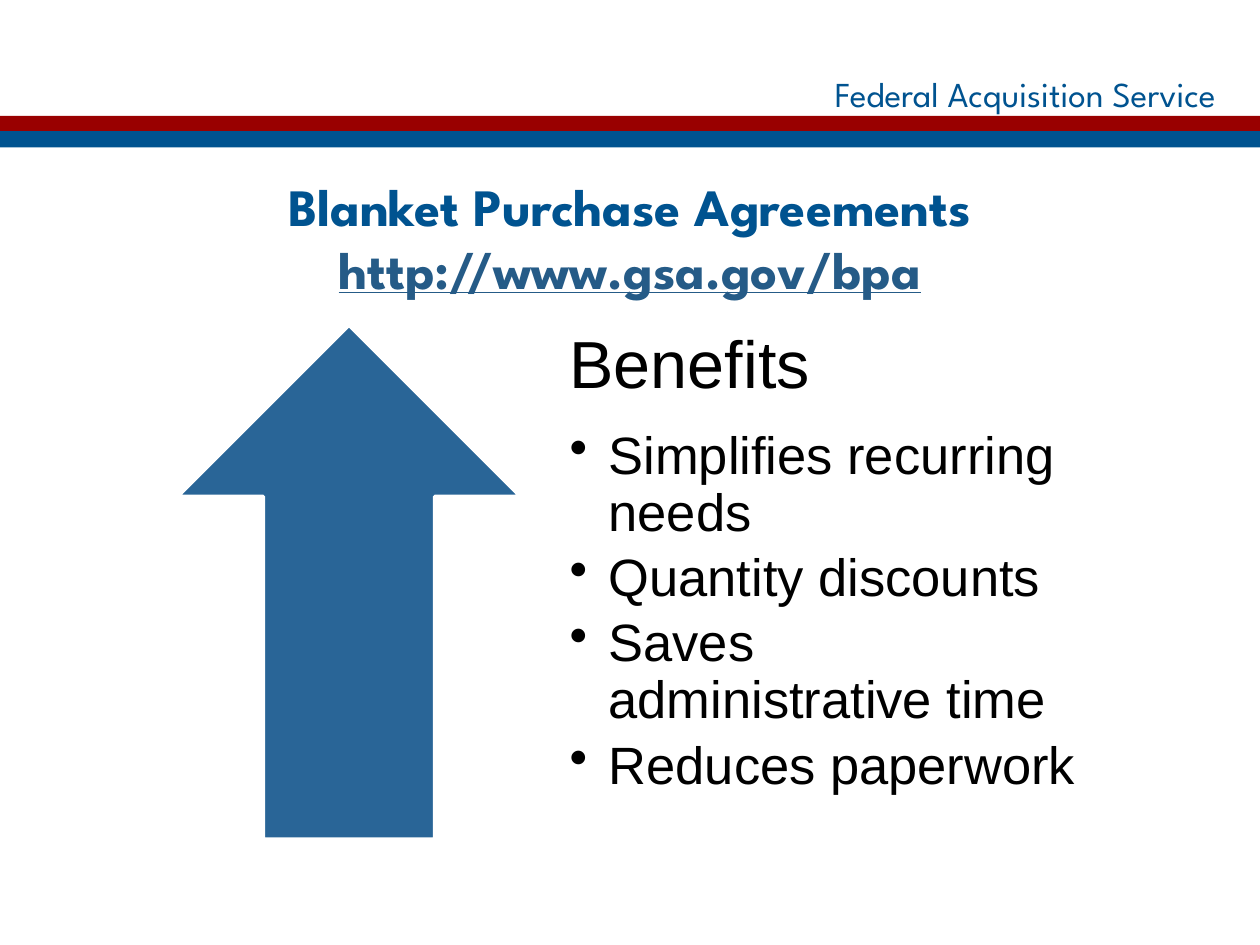
from pptx import Presentation
from pptx.dml.color import RGBColor
from pptx.enum.shapes import MSO_SHAPE
from pptx.enum.text import MSO_ANCHOR, PP_ALIGN
from pptx.oxml.ns import qn
from pptx.util import Inches, Pt
from lxml.etree import SubElement

NAVY = RGBColor(0x00, 0x53, 0x90)
RED = RGBColor(0x99, 0x00, 0x00)
LINK = RGBColor(0x25, 0x5B, 0x87)
STEEL = RGBColor(0x29, 0x65, 0x97)
WHITE = RGBColor(0xFF, 0xFF, 0xFF)
BLACK = RGBColor(0x00, 0x00, 0x00)
HEAD, BODY = "League Spartan", "Arial"

# Content
AGENCY = "Federal Acquisition Service"
TITLE = "Blanket Purchase Agreements"
URL = "http://www.gsa.gov/bpa"
TOPIC = "Benefits"
POINTS = ["Simplifies recurring needs", "Quantity discounts",
          "Saves administrative time", "Reduces paperwork"]
BANDS = [RED, NAVY]

deck = Presentation()
deck.slide_width, deck.slide_height = Inches(10), Inches(7.5)
slide = deck.slides.add_slide(deck.slide_layouts[6])


def add_box(left, top, width, height, anchor, inset=(0.1, 0.05, 0.1, 0.05), wrap=True):
    box = slide.shapes.add_textbox(*map(Inches, (left, top, width, height)))
    frame = box.text_frame
    frame.word_wrap = wrap
    frame.vertical_anchor = anchor
    (frame.margin_left, frame.margin_top,
     frame.margin_right, frame.margin_bottom) = map(Inches, inset)
    return frame


def add_text(frame, text, size, color, font=BODY, bold=False, line=False,
             align=PP_ALIGN.LEFT, lead=None, after=0, bullet=False):
    """Fill the first empty paragraph, or add one, and return it."""
    para = frame.paragraphs[0]
    if para.runs:
        para = frame.add_paragraph()
    if bullet:
        props = para._p.get_or_add_pPr()
        props.set("marL", str(Inches(0.31)))
        props.set("indent", str(-Inches(0.31)))
        SubElement(props, qn("a:buChar"), char="•")
    para.alignment, para.space_after = align, Pt(after)
    if lead:
        para.line_spacing = lead
    run = para.add_run()
    run.text = text
    style = run.font
    style.name, style.size, style.bold, style.underline = font, Pt(size), bold, line
    style.color.rgb = color
    return para


def add_form(kind, left, top, width, height, fill):
    form = slide.shapes.add_shape(kind, *map(Inches, (left, top, width, height)))
    form.shadow.inherit = False
    form.fill.solid()
    form.fill.fore_color.rgb = fill
    form.line.fill.background()
    return form


# Header with two bands
add_text(add_box(5.5, 0.55, 4.25, 0.38, MSO_ANCHOR.MIDDLE, wrap=False),
         AGENCY, 20, NAVY, font=HEAD, align=PP_ALIGN.RIGHT)
for i, color in enumerate(BANDS):
    add_form(MSO_SHAPE.RECTANGLE, 0, 0.92 + i * 0.12, 10, 0.13, color)

# Title and address
title = add_box(0.75, 1.33, 8.5, 1.72, MSO_ANCHOR.TOP)
for text, color, line in [(TITLE, NAVY, False), (URL, LINK, True)]:
    add_text(title, text, 30, color, font=HEAD, bold=True, line=line,
             align=PP_ALIGN.CENTER)

# Arrow
arrow = add_form(MSO_SHAPE.UP_ARROW, 1.41, 2.58, 2.72, 4.08, STEEL)
arrow.line.color.rgb = WHITE
arrow.line.width = Pt(2)

# Benefits
list_box = add_box(4.22, 2.58, 4.62, 4.08, MSO_ANCHOR.MIDDLE, inset=(0.3, 0, 0.3, 0.3))
add_text(list_box, TOPIC, 38, BLACK, lead=0.9, after=15)
for point in POINTS:
    add_text(list_box, point, 30, BLACK, lead=0.9, after=5, bullet=True)

deck.save("out.pptx")
